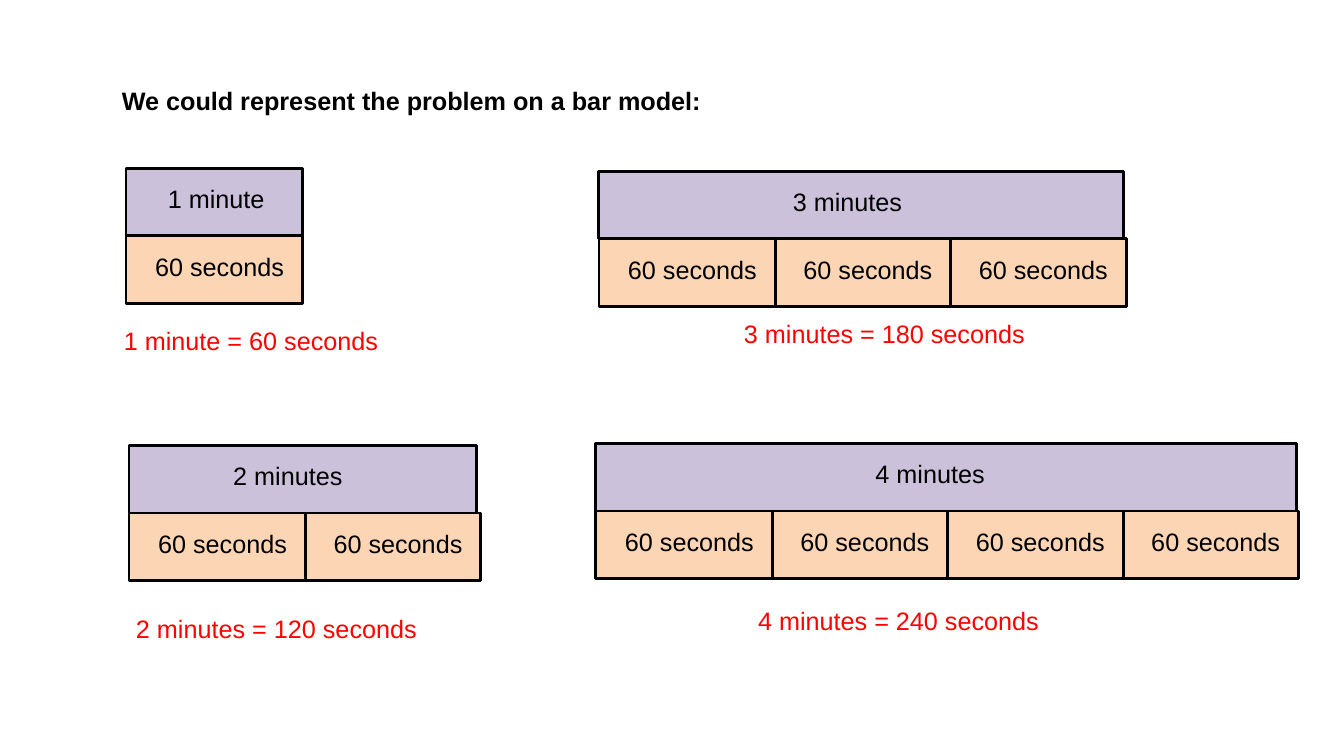
from pptx import Presentation
from pptx.dml.color import RGBColor
from pptx.enum import shapes, text
from pptx.util import Inches, Pt

BLACK = RGBColor(0, 0, 0)
RED = RGBColor(0xFF, 0, 0)
LILAC = RGBColor(0xCC, 0xC1, 0xDA)
PEACH = RGBColor(0xFC, 0xD5, 0xB5)

HIGH = 0.67   # height of a bar
CELL = 1.75   # width of one minute
STEP = 1.74   # distance between neighbouring cells

# count, left, top, bar width, label left, sum left, sum top
MODELS = [
    (1, 1.25, 1.67, 1.75, 1.11, 1.13, 3.18),
    (2, 1.28, 4.42, 3.45, 1.82, 1.25, 6.04),
    (3, 5.94, 1.7, 5.2, 7.37, 7.28, 3.11),
    (4, 5.91, 4.4, 6.95, 8.19, 7.42, 5.96),
]


def write(slide, words, left, top, width, color=BLACK, bold=False,
          align=text.PP_ALIGN.LEFT):
    box = slide.shapes.add_textbox(
        Inches(left), Inches(top), Inches(width), Inches(0.4))
    box.text_frame.word_wrap = True
    line = box.text_frame.paragraphs[0]
    line.text = words
    line.alignment = align
    line.font.name = "Arial"
    line.font.size = Pt(18)
    line.font.bold = bold
    line.font.color.rgb = color


def draw_bar(slide, left, top, width, fill):
    bar = slide.shapes.add_shape(
        shapes.MSO_SHAPE.RECTANGLE,
        Inches(left), Inches(top), Inches(width), Inches(HIGH))
    bar.shadow.inherit = False
    bar.fill.solid()
    bar.fill.fore_color.rgb = fill
    bar.line.color.rgb = BLACK
    bar.line.width = Pt(2)


def draw_model(slide, count, left, top, width, label, sum_left, sum_top):
    name = "1 minute" if count == 1 else f"{count} minutes"

    # Whole bar
    draw_bar(slide, left, top, width, LILAC)
    write(slide, name, label, top + 0.1, 2.07, align=text.PP_ALIGN.CENTER)

    # Cells of 60 seconds, the leftmost in front
    row = top + HIGH
    for i in reversed(range(count)):
        x = left + i * STEP
        draw_bar(slide, x, row, CELL, PEACH)
        write(slide, "60 seconds", x + 0.19, row + 0.1, CELL - 0.19)

    # Sum under the model
    write(slide, f"{name} = {count * 60} seconds", sum_left, sum_top, 3.39, RED)


def main():
    deck = Presentation()
    deck.slide_width = Inches(13.33)
    deck.slide_height = Inches(7.5)
    slide = deck.slides.add_slide(deck.slide_layouts[6])

    # Heading
    write(slide, "We could represent the problem on a bar model:",
          1.11, 0.8, 10.61, bold=True)

    # Four bar models
    for model in MODELS:
        draw_model(slide, *model)

    deck.save("out.pptx")


if __name__ == "__main__":
    main()
